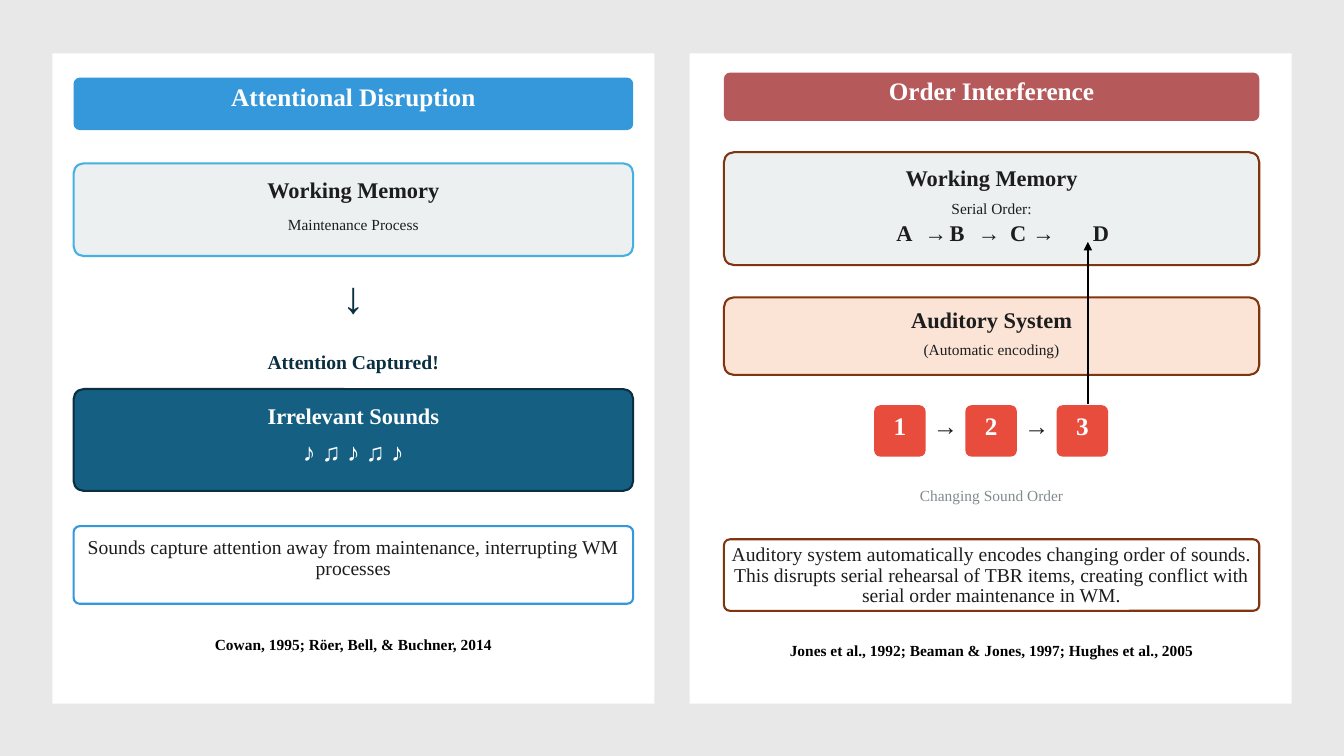
from dataclasses import dataclass

from lxml import etree
from pptx import Presentation
from pptx import util as u
from pptx.dml.color import RGBColor
from pptx.enum import shapes, text
from pptx.oxml.ns import qn

PX = 9144


@dataclass(frozen=True)
class Theme:
    """Colours, type sizes and line pitches of the slide."""
    font: str = "Times New Roman"
    page: str = "E8E8E8"
    white: str = "FFFFFF"
    black: str = "000000"
    ink: str = "1D1D1D"
    grey: str = "7F8C8D"
    card: str = "ECF0F1"
    blue: str = "3498DB"
    sky: str = "46B1E1"
    teal: str = "156082"
    navy: str = "0A2F40"
    rose: str = "B5595A"
    brown: str = "80350E"
    peach: str = "FBE3D6"
    red: str = "E74C3C"
    title: tuple = (18, 15)
    heading: tuple = (16, 15.8)
    body: tuple = (14, 14.7)
    small: tuple = (11, 13.7)
    symbol: tuple = (18, 16.8)
    notes: tuple = (18, 18.9)
    arrow: tuple = (32, 21)


THEME = Theme()


def px(value):
    """Turn px into EMU."""
    return u.Emu(round(value * PX))


def rgb(code):
    """Turn a hex code into a colour."""
    return RGBColor.from_string(code)


def write(frame, words, style=THEME.body, color=THEME.ink, bold=False, after=0,
          align=text.PP_ALIGN.CENTER):
    """Add a formatted paragraph to a text frame and return it."""
    para = frame.paragraphs[0]
    if para.runs:
        para = frame.add_paragraph()
    size, pitch = style
    para.alignment = align
    para.line_spacing = u.Pt(pitch)
    para.space_after = u.Pt(after)
    span = para.add_run()
    span.text = words
    span.font.name = THEME.font
    span.font.size = u.Pt(size)
    span.font.bold = bold
    span.font.color.rgb = rgb(color)
    return para


def prepare(frame, top=0, side=0):
    """Set wrapping, anchor and margins of a text frame."""
    frame.word_wrap = True
    frame.vertical_anchor = text.MSO_ANCHOR.TOP
    frame.margin_top, frame.margin_bottom = px(top), 0
    frame.margin_left = frame.margin_right = px(side)
    return frame


def add_label(page, area, words, **style):
    """Add a text box with one paragraph and return the paragraph."""
    box = page.shapes.add_textbox(*map(px, area))
    return write(prepare(box.text_frame), words, **style)


def add_block(page, area, fill, line=None, radius=0, top=0):
    """Add a filled rectangle, rounded if it has a radius, and return its text frame."""
    kind = shapes.MSO_SHAPE.ROUNDED_RECTANGLE if radius else shapes.MSO_SHAPE.RECTANGLE
    box = page.shapes.add_shape(kind, *map(px, area))
    box.shadow.inherit = False
    if radius:
        box.adjustments[0] = radius / min(area[2:])
    box.fill.solid()
    box.fill.fore_color.rgb = rgb(fill)
    if line:
        box.line.color.rgb = rgb(line)
        box.line.width = u.Pt(1.5)
    else:
        box.line.fill.background()
    return prepare(box.text_frame, top, side=5)


def add_banner(page, area, title, fill, top):
    """Add a column title."""
    frame = add_block(page, area, fill, radius=6, top=top)
    write(frame, title, style=THEME.title, color=THEME.white, bold=True)


def add_card(page, area, heading, detail, fill, line, top, gap,
             color=THEME.ink, style=THEME.small):
    """Add an outlined card with a heading and a detail line."""
    frame = add_block(page, area, fill, line, radius=10, top=top)
    write(frame, heading, style=THEME.heading, color=color, bold=True, after=gap)
    write(frame, detail, style=style, color=color)


def add_note(page, area, words, line, top):
    """Add an outlined explanation."""
    write(add_block(page, area, THEME.white, line, radius=6, top=top), words)


def add_sequence(page, area, items, stops):
    """Add items on one line, each after the first at its tab stop."""
    para = add_label(page, area, "\t".join(items), style=THEME.heading, bold=True,
                     align=text.PP_ALIGN.LEFT)
    tabs = etree.SubElement(para._p.get_or_add_pPr(), qn("a:tabLst"))
    for stop in stops:
        etree.SubElement(tabs, qn("a:tab"), pos=str(px(stop)), algn="l")


def add_sounds(page, left, top, size, pitch, count):
    """Add numbered tiles with an arrow in each gap."""
    for index in range(count):
        x = left + index * pitch
        frame = add_block(page, (x, top, size, size), THEME.red, radius=6, top=10)
        write(frame, str(index + 1), style=THEME.symbol, color=THEME.white, bold=True)
        if index < count - 1:
            add_label(page, (x + size, top + 12, pitch - size, 27), "→", style=THEME.symbol)


def add_arrow(page, start, end):
    """Add a thin line with a triangular head at its end."""
    arrow = page.shapes.add_connector(shapes.MSO_CONNECTOR.STRAIGHT, *map(px, start + end))
    arrow.line.color.rgb = rgb(THEME.black)
    arrow.line.width = u.Pt(1)
    etree.SubElement(arrow.line._get_or_add_ln(), qn("a:tailEnd"), type="triangle")
    etree.SubElement(arrow._element.spPr, qn("a:effectLst"))


def build_attention(page):
    """Fill the left column."""
    left, width = 73, 555
    add_block(page, (52, 53, 597, 645), THEME.white)
    add_banner(page, (left, 77, width, 52), "Attentional Disruption", THEME.blue, top=11)
    add_card(page, (left, 162, width, 92), "Working Memory", "Maintenance Process",
             THEME.card, THEME.sky, top=15, gap=8)
    add_label(page, (left, 291, width, 36), "↓", style=THEME.arrow, color=THEME.navy)
    add_label(page, (left, 350, width, 25), "Attention Captured!", color=THEME.navy, bold=True)
    add_card(page, (left, 386, width, 101), "Irrelevant Sounds", "♪ ♫ ♪ ♫ ♪",
             THEME.teal, THEME.navy, top=15, gap=8, color=THEME.white, style=THEME.notes)
    add_note(page, (left, 522, width, 77),
             "Sounds capture attention away from maintenance, interrupting WM processes",
             THEME.blue, top=10)
    add_label(page, (left, 629, width, 24), "Cowan, 1995; Röer, Bell, & Buchner, 2014",
              style=THEME.small, color=THEME.black, bold=True)


def build_order(page):
    """Fill the right column."""
    left, width = 718, 531
    add_block(page, (684, 53, 597, 645), THEME.white)
    add_banner(page, (left, 72, width, 48), "Order Interference", THEME.rose, top=10)
    add_card(page, (left, 151, width, 112), "Working Memory", "Serial Order:",
             THEME.card, THEME.brown, top=14, gap=5)
    add_sequence(page, (889, 222, 230, 25), "A→B→C→D", (28, 53, 81, 113, 135, 195))
    add_card(page, (left, 295, width, 77), "Auditory System", "(Automatic encoding)",
             THEME.peach, THEME.brown, top=11, gap=4)
    add_sounds(page, left=867, top=402, size=51, pitch=90.5, count=3)
    add_label(page, (left, 482, width, 22), "Changing Sound Order",
              style=THEME.small, color=THEME.grey)
    add_note(page, (left, 535, width, 71),
             "Auditory system automatically encodes changing order of sounds. "
             "This disrupts serial rehearsal of TBR items, creating conflict with "
             "serial order maintenance in WM.", THEME.brown, top=4)
    add_label(page, (left, 635, width, 22),
              "Jones et al., 1992; Beaman & Jones, 1997; Hughes et al., 2005",
              style=THEME.small, color=THEME.black, bold=True)
    add_arrow(page, (1079, 401), (1079, 240))


def main():
    """Build and save the deck."""
    deck = Presentation()
    deck.slide_width, deck.slide_height = px(1333), px(750)
    page = deck.slides.add_slide(deck.slide_layouts[6])
    page.background.fill.solid()
    page.background.fill.fore_color.rgb = rgb(THEME.page)
    build_attention(page)
    build_order(page)
    deck.save("out.pptx")


if __name__ == "__main__":
    main()
